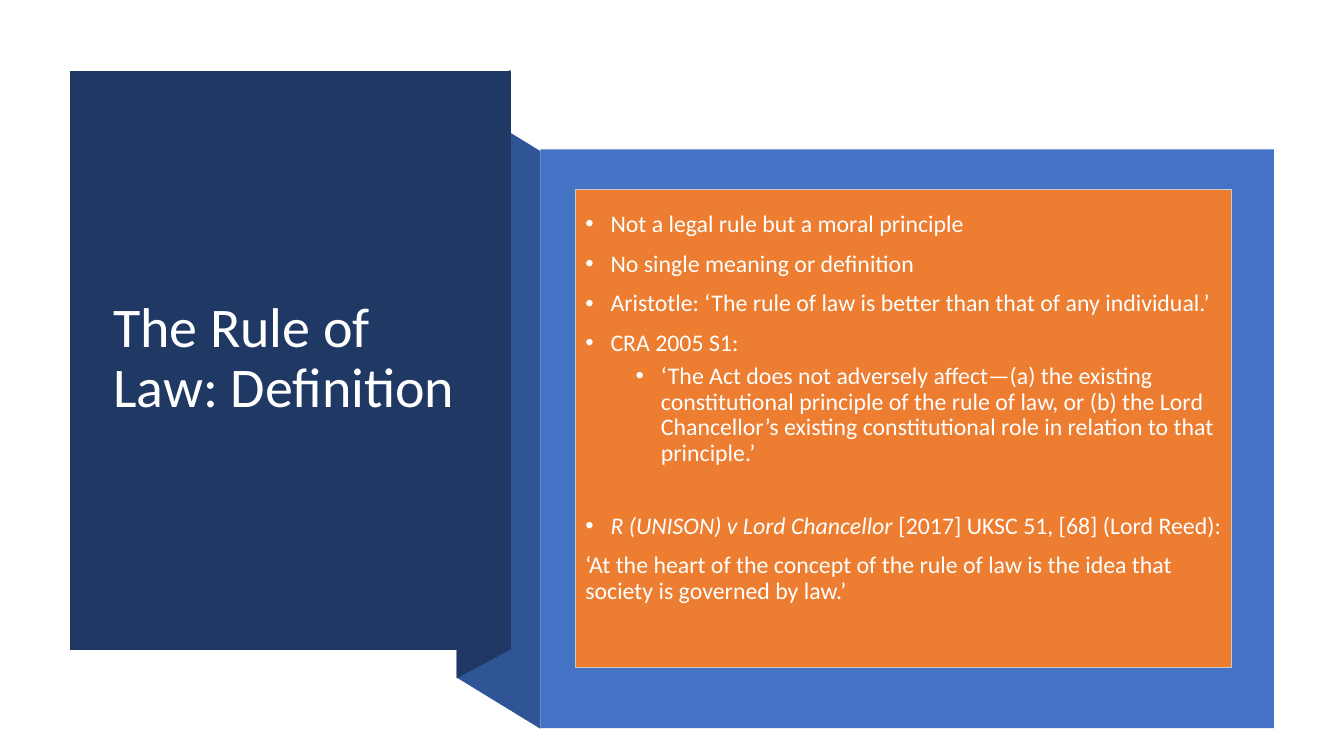
from lxml.etree import SubElement
from pptx import Presentation
from pptx.dml.color import RGBColor
from pptx.enum.shapes import MSO_SHAPE as SHAPE
from pptx.enum.text import MSO_ANCHOR as ANCHOR, PP_ALIGN as ALIGN
from pptx.oxml.ns import qn
from pptx.util import Pt

COLORS = {
    "navy": "203864", "fold": "2F5597", "blue": "4472C4", "orange": "ED7D31",
    "border": "C9C9C9", "white": "FFFFFF", "body": "FEFFFF",
}


def paint(sp, fill, line=None):
    sp.shadow.inherit = False
    sp.fill.solid()
    sp.fill.fore_color.rgb = RGBColor.from_string(COLORS[fill])
    if line:
        sp.line.color.rgb = RGBColor.from_string(COLORS[line])
        sp.line.width = Pt(0.75)
    else:
        sp.line.fill.background()


def add_text(p, text, size=17, color="body", before=0, indent=None, level=0, italic_lead=""):
    """Fill a paragraph; indent is the bullet text's left margin in points."""
    p.alignment, p.level = ALIGN.LEFT, level
    p.line_spacing, p.space_before = 0.9, Pt(before)
    if indent is not None:
        pPr = p._p.get_or_add_pPr()
        pPr.set("marL", str(Pt(indent)))
        pPr.set("indent", str(Pt(-18)))
        SubElement(pPr, qn("a:buFont"), typeface="Arial")
        SubElement(pPr, qn("a:buChar"), char="•")
    for words, italic in ((italic_lead, True), (text, False)):
        if words:
            r = p.add_run()
            r.text = words
            r.font.name, r.font.size, r.font.italic = "Calibri", Pt(size), italic
            r.font.color.rgb = RGBColor.from_string(COLORS[color])


prs = Presentation()
prs.slide_width, prs.slide_height = Pt(960), Pt(540)
s = prs.slides.add_slide(prs.slide_layouts[6])

# Folded ribbon behind the two panels, then the title panel
ribbon = [
    ("fold", [(386, 520.6), (326.2, 484), (326.2, 71.3), (386, 108)]),
    ("navy", [(364.6, 464), (326.2, 484.6), (326.2, 70.6), (364.6, 50)]),
    ("navy", [(50, 50.4), (365, 50.4), (365, 464.4), (50, 464.4)]),
]
for fill, corners in ribbon:
    start, *rest = [(Pt(x), Pt(y)) for x, y in corners]
    outline = s.shapes.build_freeform(*start)
    outline.add_line_segments(rest, close=True)
    paint(outline.convert_to_shape(), fill)

title = s.shapes.add_textbox(Pt(73.8), Pt(77), Pt(267), Pt(359.3))
tf = title.text_frame
tf.word_wrap, tf.vertical_anchor = True, ANCHOR.MIDDLE
add_text(tf.paragraphs[0], "The Rule of Law: Definition", size=40, color="white")

panel = s.shapes.add_shape(SHAPE.RECTANGLE, Pt(386), Pt(106.8), Pt(524), Pt(413.4))
paint(panel, "blue")

body = s.shapes.add_shape(SHAPE.RECTANGLE, Pt(411), Pt(135.4), Pt(468.7), Pt(341.3))
paint(body, "orange", "border")
tf = body.text_frame
tf.word_wrap, tf.vertical_anchor = True, ANCHOR.MIDDLE
tf.margin_bottom = Pt(32.3)

points = [
    ("Not a legal rule but a moral principle", dict(before=10, indent=18)),
    ("No single meaning or definition", dict(before=10, indent=18)),
    ("Aristotle: ‘The rule of law is better than that of any individual.’",
     dict(before=10, indent=18)),
    ("CRA 2005 S1:", dict(before=10, indent=18)),
    ("‘The Act does not adversely affect—(a) the existing constitutional principle of the "
     "rule of law, or (b) the Lord Chancellor’s existing constitutional role in relation to "
     "that principle.’", dict(before=5, indent=54, level=1)),
    ("[2017] UKSC 51, [68] (Lord Reed):",
     dict(before=33.5, indent=18, italic_lead="R (UNISON) v Lord Chancellor ")),
    ("‘At the heart of the concept of the rule of law is the idea that society is governed "
     "by law.’", dict(before=10)),
]
for i, (text, style) in enumerate(points):
    p = tf.add_paragraph() if i else tf.paragraphs[0]
    add_text(p, text, **style)

prs.save("out.pptx")
